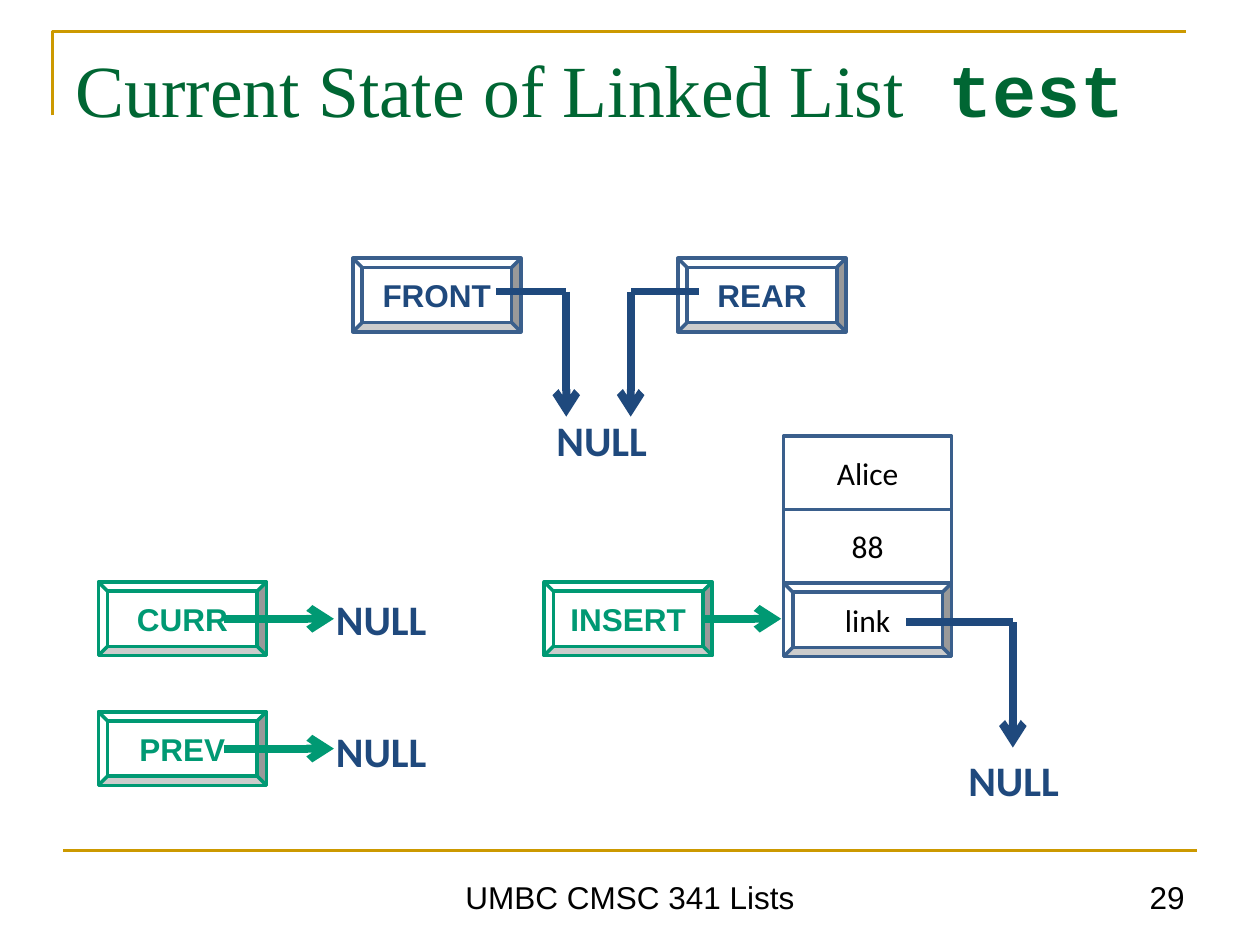
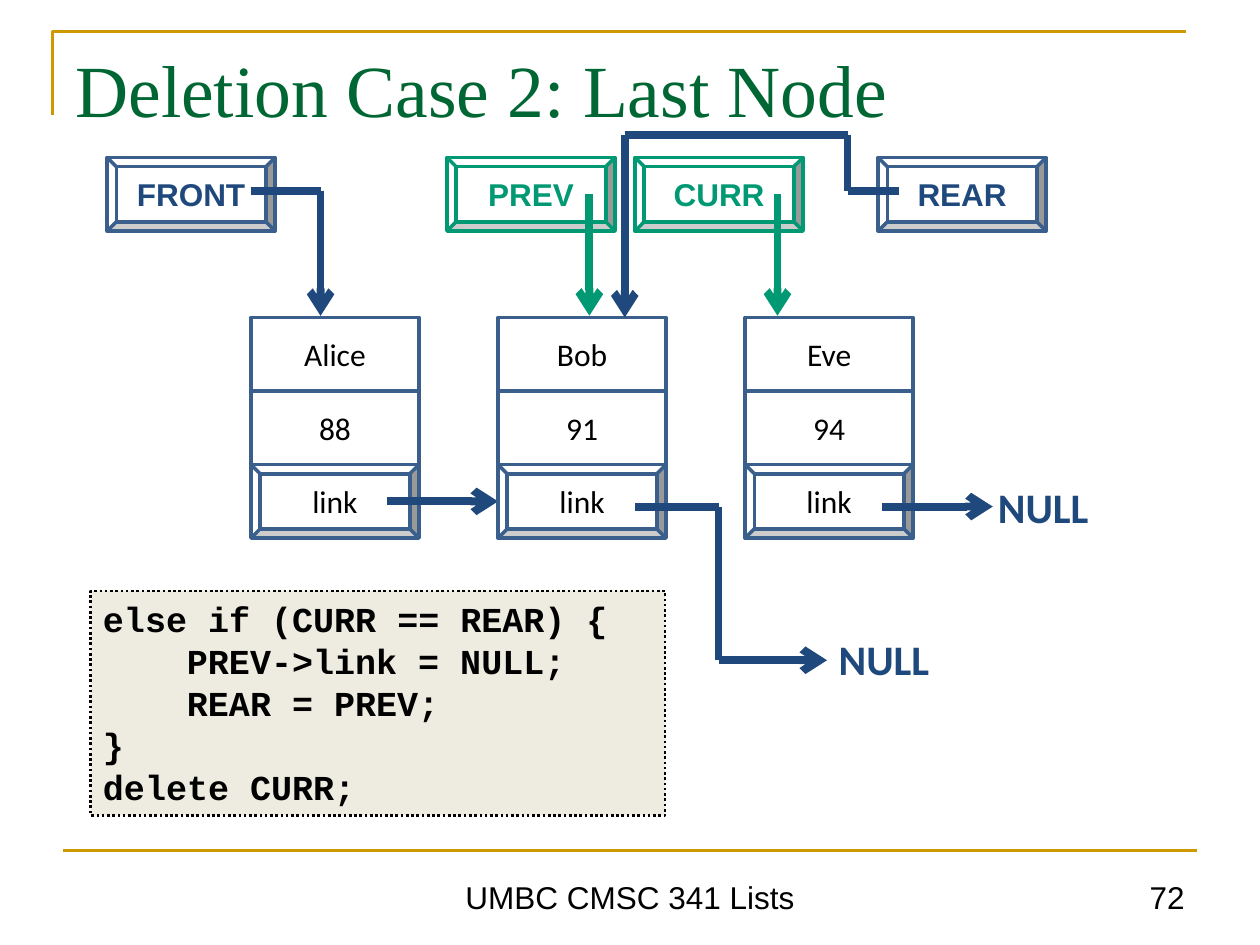
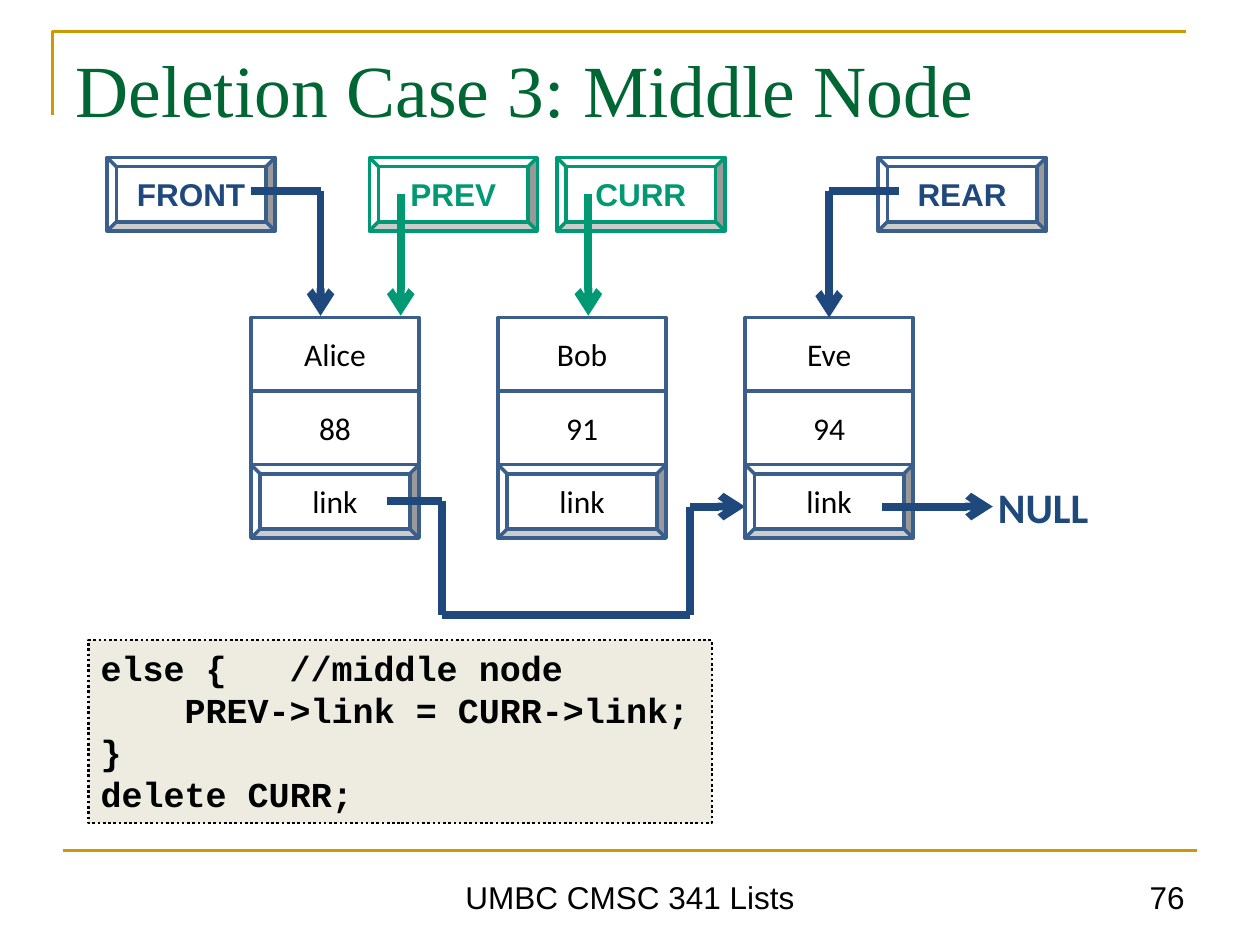
from lxml import etree
from pptx import Presentation
from pptx.dml.color import RGBColor
from pptx.enum.dml import MSO_LINE
from pptx.enum.shapes import MSO_CONNECTOR, MSO_SHAPE
from pptx.enum.text import MSO_ANCHOR, PP_ALIGN
from pptx.oxml.ns import qn
from pptx.util import Pt

BEVEL, RECTANGLE = MSO_SHAPE.BEVEL, MSO_SHAPE.RECTANGLE
STRAIGHT = MSO_CONNECTOR.STRAIGHT
LEFT, CENTER, RIGHT = PP_ALIGN.LEFT, PP_ALIGN.CENTER, PP_ALIGN.RIGHT
TOP, MIDDLE, BOTTOM = MSO_ANCHOR.TOP, MSO_ANCHOR.MIDDLE, MSO_ANCHOR.BOTTOM
DOTTED = MSO_LINE.ROUND_DOT

GOLD, TITLE_GREEN, GREEN = "CC9900", "006633", "009973"
NAVY, OUTLINE, BLACK, WHITE, CREAM = "1F497D", "3A5F8C", "000000", "FFFFFF", "EEECE1"
CELL_WIDTH, CELL_HEIGHT = 96, 42
POINTER_TOP, NODE_TOP = 90, 181.5
NODE_LEFTS = [143.4 + 141.2 * index for index in range(3)]
REAR_LEFT = 501.8
CODE_CHARACTER = 12
FRONT_PATH = [(82, 19), (122, 19), (122, 90.5)]
REAR_PATH = [(12, 19), (-28, 19), (-28, 91.5)]


def color(hex_string):
    """Turn a hex string into a colour."""
    return RGBColor.from_string(hex_string)


def add_run(paragraph, text, font, size, hex_string, bold=False):
    """Append one formatted run."""
    run = paragraph.add_run()
    run.text = text
    run.font.name, run.font.size, run.font.bold = font, Pt(size), bold
    run.font.color.rgb = color(hex_string)


def add_text(slide, box, runs, alignment=LEFT, anchor=TOP):
    """Add a one-paragraph text box made of the given runs."""
    frame = slide.shapes.add_textbox(*map(Pt, box)).text_frame
    frame.word_wrap = True
    frame.vertical_anchor = anchor
    frame.paragraphs[0].alignment = alignment
    for run in runs:
        add_run(frame.paragraphs[0], *run)


def add_box(slide, kind, box, fill, line, width):
    """Add a filled, outlined shape without shadow."""
    shape = slide.shapes.add_shape(kind, *map(Pt, box))
    shape.shadow.inherit = False
    shape.fill.solid()
    shape.fill.fore_color.rgb = color(fill)
    shape.line.color.rgb = color(line)
    shape.line.width = Pt(width)
    return shape


def add_cell(slide, kind, left, top, line, run):
    """Add one standard cell with centred text."""
    shape = add_box(slide, kind, (left, top, CELL_WIDTH, CELL_HEIGHT), WHITE, line, 2)
    shape.text_frame.vertical_anchor = MIDDLE
    paragraph = shape.text_frame.paragraphs[0]
    paragraph.alignment = CENTER
    add_run(paragraph, *run)
    return shape


def add_line(slide, start, end, hex_string, width):
    """Add a straight connector without shadow."""
    connector = slide.shapes.add_connector(STRAIGHT, *map(Pt, (*start, *end)))
    connector.line.color.rgb = color(hex_string)
    connector.line.width = Pt(width)
    etree.SubElement(connector._element.spPr, qn("a:effectLst"))
    return connector


def add_path(slide, left, top, points, hex_string):
    """Draw an arrow through points given relative to a box and return its last part."""
    placed = [(left + x, top + y) for x, y in points]
    for start, end in zip(placed, placed[1:]):
        connector = add_line(slide, start, end, hex_string, 4.5)
    etree.SubElement(connector.line._get_or_add_ln(), qn("a:tailEnd"), type="arrow")
    return connector


def add_pointer(slide, name, left, top, points, text_color=NAVY):
    """Add a named pointer box with its arrow and return the arrow."""
    line = OUTLINE if text_color == NAVY else text_color
    add_cell(slide, BEVEL, left, top, line, (name, "Arial", 18, text_color, True))
    return add_path(slide, left, top, points, text_color)


def add_node(slide, left, top, name, mark, points=()):
    """Add a list node with an optional link arrow and return its top cell."""
    rows = [(name, RECTANGLE), (mark, RECTANGLE), ("link", BEVEL)]
    cells = [
        add_cell(slide, kind, left, top + row * CELL_HEIGHT, OUTLINE,
                 (text, "Calibri", 18, BLACK))
        for row, (text, kind) in reversed(list(enumerate(rows)))
    ]
    if points:
        add_path(slide, left, top, points, NAVY)
    return cells[-1]


def add_null(slide, left, top):
    """Add a NULL label."""
    add_text(slide, (left, top, 111.6, 36.7),
             [("NULL", "Calibri", 24, NAVY, True)], CENTER)


def add_code(slide, box, lines):
    """Add a code panel from pairs of indent in characters and text."""
    panel = add_box(slide, RECTANGLE, box, CREAM, BLACK, 1.5)
    panel.line.dash_style = DOTTED
    frame = panel.text_frame
    frame.vertical_anchor = TOP
    for index, (indent, text) in enumerate(lines):
        paragraph = frame.add_paragraph() if index else frame.paragraphs[0]
        paragraph.alignment = LEFT
        properties = paragraph._p.get_or_add_pPr()
        properties.set("marL", str(Pt(indent * CODE_CHARACTER)))
        properties.set("indent", "0")
        if "\t" in text:
            stops = etree.SubElement(properties, qn("a:tabLst"))
            etree.SubElement(stops, qn("a:tab"), pos=str(Pt(9 * CODE_CHARACTER)), algn="l")
        add_run(paragraph, text, "Courier New", 20, BLACK, True)


def start_slide(presentation, title, number, code_word=""):
    """Add a blank slide with the shared frame, title and footer."""
    slide = presentation.slides.add_slide(presentation.slide_layouts[6])
    builder = slide.shapes.build_freeform(Pt(30), Pt(66))
    builder.add_line_segments([(Pt(30), Pt(18)), (Pt(678), Pt(18))], close=False)
    corner = builder.convert_to_shape()
    corner.shadow.inherit = False
    corner.fill.background()
    corner.line.color.rgb = color(GOLD)
    corner.line.width = Pt(1.5)
    add_line(slide, (36, 486), (684, 486), GOLD, 1.5)
    runs = [(title, "Times New Roman", 42, TITLE_GREEN)]
    if code_word:
        runs.append((" " + code_word, "Courier New", 42, TITLE_GREEN, True))
    add_text(slide, (36, 21.6, 647.3, 80), runs)
    for box, text, alignment in [
        ((126, 491.8, 468, 35.3), "UMBC CMSC 341 Lists", CENTER),
        ((516.2, 491.8, 167.8, 35.3), number, RIGHT),
    ]:
        add_text(slide, box, [(text, "Arial", 18, BLACK)], alignment, BOTTOM)
    return slide


def add_three_nodes(slide, alice_path, bob_path=()):
    """Add the Alice, Bob and Eve nodes and return the top cell of Eve."""
    people = [("Alice", "88", alice_path), ("Bob", "91", bob_path),
              ("Eve", "94", [(78.5, 108), (141.5, 108)])]
    for left, person in zip(NODE_LEFTS, people):
        head = add_node(slide, left, NODE_TOP, *person)
    add_null(slide, NODE_LEFTS[2] + 114.5, NODE_TOP + 90)
    add_pointer(slide, "FRONT", 61.2, POINTER_TOP, FRONT_PATH)
    return head


def build_current_state(presentation):
    """Build the slide with an empty list and a new node."""
    slide = start_slide(presentation, "Current State of Linked List", "29", "test")
    add_pointer(slide, "FRONT", 201.6, 147.6, FRONT_PATH)
    add_pointer(slide, "REAR", 387.4, 147.6, [(12, 19), (-27, 19), (-27, 90.5)])
    for position in [(288, 233.3), (162, 411.1), (162, 335.5), (523.4, 427.7)]:
        add_null(slide, *position)
    add_node(slide, 447.8, 249.2, "Alice", "88", [(70, 106.4), (131, 106.4), (131, 178)])
    for name, left, top, start, end in [
        ("CURR", 56.2, 332.6, 72, 134.6),
        ("PREV", 56.2, 406.8, 72, 134.6),
        ("INSERT", 311, 332.6, 91, 135.4),
    ]:
        add_pointer(slide, name, left, top, [(start, 21), (end, 21)], GREEN)


def build_last_node(presentation):
    """Build the slide on deleting the last node."""
    slide = start_slide(presentation, "Deletion Case 2: Last Node", "72")
    add_three_nodes(slide, [(78, 105), (141.2, 105)],
                    [(78.5, 108), (126, 108), (126, 195.8), (188, 195.8)])
    add_null(slide, 449.3, 358.6)
    for name, left in [("PREV", 255.4), ("CURR", 362.9)]:
        add_pointer(slide, name, left, POINTER_TOP, [(81.4, 21), (81.4, 90.4)], GREEN)
    add_pointer(slide, "REAR", REAR_LEFT, POINTER_TOP,
                [(12, 19), (-17.5, 19), (-17.5, -13), (-144.8, -13), (-144.8, 91.4)])
    add_code(slide, (51.8, 337.7, 328.3, 128.2), [
        (0, "else if (CURR == REAR) {"),
        (4, "PREV->link = NULL;"),
        (4, "REAR = PREV;"),
        (0, "}"),
        (0, "delete CURR;"),
    ])


def build_middle_node(presentation):
    """Build the slide on deleting a middle node."""
    slide = start_slide(presentation, "Deletion Case 3: Middle Node", "76")
    eve_head = add_three_nodes(slide, [(78, 105), (109, 105), (109, 170), (251, 170),
                                       (251, 108), (282.4, 108)])
    for name, left in [("PREV", 211), ("CURR", 318.2)]:
        add_pointer(slide, name, left, POINTER_TOP, [(18, 21), (18, 90.4)], GREEN)
    rear_arrow = add_pointer(slide, "REAR", REAR_LEFT, POINTER_TOP, REAR_PATH)
    rear_arrow.end_connect(eve_head, 0)
    add_code(slide, (50.4, 365.8, 356.4, 104.4), [
        (0, "else {\t//middle node"),
        (4, "PREV->link = CURR->link;"),
        (0, "}"),
        (0, "delete CURR;"),
    ])


def main():
    """Build and save the presentation."""
    presentation = Presentation()
    presentation.slide_width, presentation.slide_height = Pt(720), Pt(540)
    build_current_state(presentation)
    build_last_node(presentation)
    build_middle_node(presentation)
    presentation.save("out.pptx")


if __name__ == "__main__":
    main()
